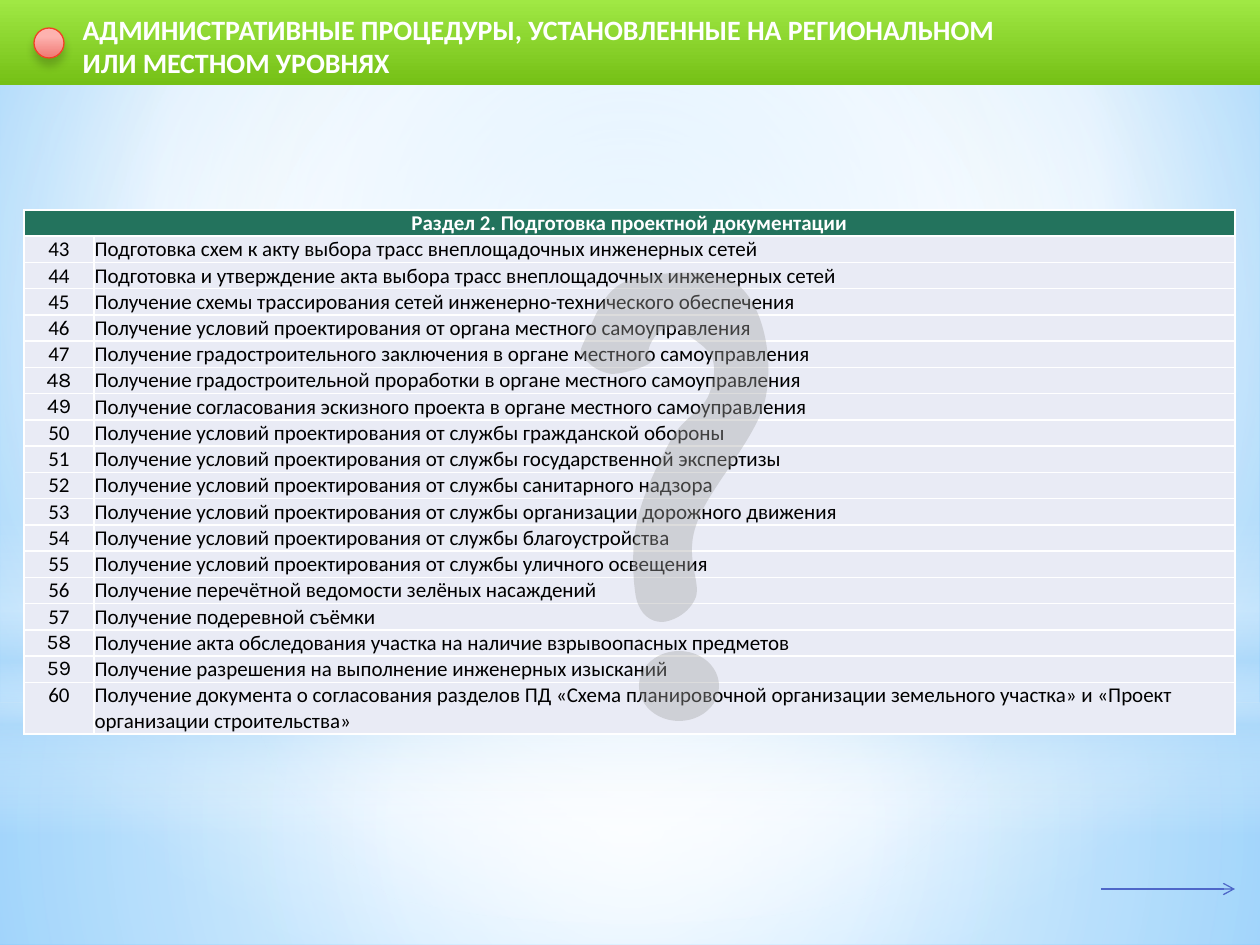
import pptx
import pptx.util
import pptx.dml.color
import pptx.enum.shapes
import pptx.enum.text
import pptx.oxml
import pptx.oxml.ns
import lxml.etree

PX = 914400 / 126
COLORS = {
    "white": "FFFFFF", "black": "000000", "sky": "9ED5FF", "deep_sky": "5BB9FF",
    "haze": "B4DCFA", "header": "23735D", "row": "E9EBF5", "gray": "A6A6A6",
    "arrow": "4E67C8", "lime": "A0E844", "green": "75C016",
    "pink": "FDB2AF", "coral": "F07873", "red": "F14124",
}
RGB = {name: pptx.dml.color.RGBColor.from_string(code) for name, code in COLORS.items()}
SHAPES = pptx.enum.shapes.MSO_SHAPE
ALIGN = pptx.enum.text.PP_ALIGN
qn = pptx.oxml.ns.qn


def add(parent, tag, **attributes):
    """Append a DrawingML child with the given attributes."""
    child = lxml.etree.SubElement(parent, qn("a:" + tag))
    for name, value in attributes.items():
        child.set(name, str(value))
    return child


def paint_gradient(fill, holder, stops, focus=None):
    """Stops are (position, colour, opacity); without a focus it runs downwards."""
    fill.gradient()
    gradient = holder.find(qn("a:gradFill"))
    for child in list(gradient):
        gradient.remove(child)
    stop_list = add(gradient, "gsLst")
    for position, color, opacity in stops:
        stop = add(stop_list, "gs", pos=position * 1000)
        add(add(stop, "srgbClr", val=COLORS[color]), "alpha", val=opacity * 1000)
    if focus:
        edges = {side: value * 1000 for side, value in zip("ltrb", focus)}
        add(add(gradient, "path", path="circle"), "fillToRect", **edges)
    else:
        add(gradient, "lin", ang=5400000, scaled=0)


deck = pptx.Presentation()
deck.slide_width, deck.slide_height = round(1260 * PX), round(945 * PX)
page = deck.slides.add_slide(deck.slide_layouts[5])

# Background
background = page.background.fill
background.gradient()
paint_gradient(background, page.element.find(".//" + qn("p:bgPr")),
               [(0, "sky", 100), (60, "white", 100), (100, "deep_sky", 100)], (20, 10, 20, 60))

# Sky layers, then the title band
center = (50, 50, 50, 50)
layers = [
    (SHAPES.RECTANGLE, (0, 703, 1260, 242),
     [(0, "white", 91), (37, "white", 76), (100, "haze", 79)], center),
    (SHAPES.RECTANGLE, (0, 0, 1260, 703),
     [(0, "white", 89), (48, "white", 62), (100, "haze", 79)], center),
    (SHAPES.RECTANGLE, (0, 519, 1260, 315),
     [(0, "white", 0), (29, "white", 30), (45, "haze", 40), (55, "white", 26),
      (65, "haze", 60), (100, "white", 0)], None),
    (SHAPES.OVAL, (0, 220, 1260, 703), [(0, "white", 100), (56, "white", 0)], center),
    (SHAPES.RECTANGLE, (0, 0, 1260, 85), [(0, "lime", 100), (100, "green", 100)], None),
]
for preset, frame, stops, focus in layers:
    layer = page.shapes.add_shape(preset, *[round(v * PX) for v in frame])
    layer.shadow.inherit = False
    layer.line.fill.background()
    paint_gradient(layer.fill, layer.element.spPr, stops, focus)

# Table of procedures
procedures = [
    "Подготовка схем к акту выбора трасс внеплощадочных инженерных сетей",
    "Подготовка и утверждение акта выбора трасс внеплощадочных инженерных сетей",
    "Получение схемы трассирования сетей инженерно-технического обеспечения",
    "Получение условий проектирования от органа местного самоуправления",
    "Получение градостроительного заключения в органе местного самоуправления",
    "Получение градостроительной проработки в органе местного самоуправления",
    "Получение согласования эскизного проекта в органе местного самоуправления",
    "Получение условий проектирования от службы гражданской обороны",
    "Получение условий проектирования от службы государственной экспертизы",
    "Получение условий проектирования от службы санитарного надзора",
    "Получение условий проектирования от службы организации дорожного движения",
    "Получение условий проектирования от службы благоустройства",
    "Получение условий проектирования от службы уличного освещения",
    "Получение перечётной ведомости зелёных насаждений",
    "Получение подеревной съёмки",
    "Получение акта обследования участка на наличие взрывоопасных предметов",
    "Получение разрешения на выполнение инженерных изысканий",
    "Получение документа о согласования разделов ПД «Схема планировочной организации "
    "земельного участка» и «Проект организации строительства»",
]
rows = [("Раздел 2. Подготовка проектной документации", "")]
rows += [(str(number), name) for number, name in enumerate(procedures, 43)]
karla_numbers = {"48", "49", "58", "59"}

table = page.shapes.add_table(len(rows), 2, *[round(v * PX) for v in (24, 210, 1211, 518)]).table
for column, width in zip(table.columns, (70, 1141)):
    column.width = round(width * PX)
for row in table.rows:
    row.height = round(26 * PX)
table.rows[len(rows) - 1].height = round(50 * PX)
table.cell(0, 0).merge(table.cell(0, 1))

for r, texts in enumerate(rows):
    for c, text in enumerate(texts):
        cell = table.cell(r, c)
        cell.margin_left = cell.margin_right = cell.margin_top = round(0.63 * PX)
        cell.margin_bottom = 0
        properties = cell._tc.get_or_add_tcPr()
        for side in ("lnL", "lnR", "lnT", "lnB"):
            border = add(properties, side, w=12700)
            add(add(border, "solidFill"), "srgbClr", val=COLORS["white"])
        cell.fill.solid()
        cell.fill.fore_color.rgb = RGB["row" if r else "header"]
        if not text:
            continue
        para = cell.text_frame.paragraphs[0]
        para.alignment = ALIGN.LEFT if c else ALIGN.CENTER
        span = para.add_run()
        span.text = text
        span.font.name = "Karla" if text in karla_numbers else "Calibri"
        span.font.size = pptx.util.Pt(12)
        span.font.bold = r == 0
        span.font.color.rgb = RGB["black" if r else "white"]

# Question mark: a frame whose outline is replaced by Bezier curves
left, top, right, bottom = 581, 272, 769, 622
start = (583, 344)
curves = [
    (590, 331, 600, 292, 625, 282), (651, 272, 716, 266, 738, 285),
    (762, 304, 774, 355, 766, 396), (760, 435, 708, 489, 697, 523),
    (684, 557, 701, 581, 696, 597), (689, 615, 670, 622, 662, 622),
    (651, 622, 640, 615, 636, 597), (633, 581, 631, 544, 638, 518),
    (644, 491, 660, 460, 672, 438), (684, 418, 701, 411, 708, 397),
    (714, 383, 717, 367, 711, 355), (704, 344, 680, 329, 670, 328),
    (660, 326, 651, 341, 649, 348), (645, 353, 656, 359, 650, 363),
    (644, 368, 622, 374, 612, 374), (602, 373, 592, 367, 588, 362),
    (583, 358, 577, 357, 583, 344),
]
question = page.shapes.add_group_shape()
builder = question.shapes.build_freeform(left, top, scale=PX)
builder.add_line_segments([(right, top), (right, bottom), (left, bottom)], close=True)
hook = builder.convert_to_shape()
outline = hook.element.spPr.find(".//" + qn("a:path"))
for command in list(outline):
    outline.remove(command)
add(add(outline, "moveTo"), "pt", x=start[0] - left, y=start[1] - top)
for curve in curves:
    bezier = add(outline, "cubicBezTo")
    for x, y in zip(curve[::2], curve[1::2]):
        add(bezier, "pt", x=x - left, y=y - top)
add(outline, "close")

dot = question.shapes.add_shape(SHAPES.OVAL, *[round(v * PX) for v in (639, 651, 80, 70)])
for part in (hook, dot):
    part.shadow.inherit = False
    part.line.fill.background()
    part.fill.solid()
    part.fill.fore_color.rgb = RGB["gray"]
    add(part.element.spPr.find(".//" + qn("a:srgbClr")), "alpha", val=39000)

# Arrow at the bottom right
arrow = page.shapes.add_connector(pptx.enum.shapes.MSO_CONNECTOR.STRAIGHT,
                                  *[round(v * PX) for v in (1101, 889, 1235, 889)])
arrow.line.color.rgb = RGB["arrow"]
arrow.line.width = pptx.util.Pt(0.75)
add(arrow.line._get_or_add_ln(), "tailEnd", type="arrow")
add(arrow.element.spPr, "effectLst")

# Title, raised above the band
title = page.shapes.title
page.shapes._spTree.append(title.element)
title.left, title.top, title.width, title.height = [round(v * PX) for v in (70, 6, 975, 81)]
box = title.text_frame
box.word_wrap = True
box.auto_size = pptx.enum.text.MSO_AUTO_SIZE.NONE
box.vertical_anchor = pptx.enum.text.MSO_ANCHOR.TOP
para = box.paragraphs[0]
para.alignment = ALIGN.LEFT
span = para.add_run()
span.text = "АДМИНИСТРАТИВНЫЕ ПРОЦЕДУРЫ, УСТАНОВЛЕННЫЕ НА РЕГИОНАЛЬНОМ ИЛИ МЕСТНОМ УРОВНЯХ"
span.font.name = "Calibri"
span.font.size = pptx.util.Pt(16)
span.font.bold = True
span.font.color.rgb = RGB["white"]

# Red ball beside the title
ball = page.shapes.add_shape(SHAPES.OVAL, *[round(v * PX) for v in (34, 28, 30, 30)])
paint_gradient(ball.fill, ball.element.spPr, [(28, "pink", 100), (100, "coral", 100)])
ball.line.color.rgb = RGB["red"]
ball.line.width = pptx.util.Pt(0.75)
ball.shadow.inherit = False
shadow = add(ball.element.spPr.find(qn("a:effectLst")), "outerShdw",
             blurRad=63500, dist=50800, dir=5400000, rotWithShape=0)
add(add(shadow, "srgbClr", val=COLORS["black"]), "alpha", val=20000)

deck.save("out.pptx")
